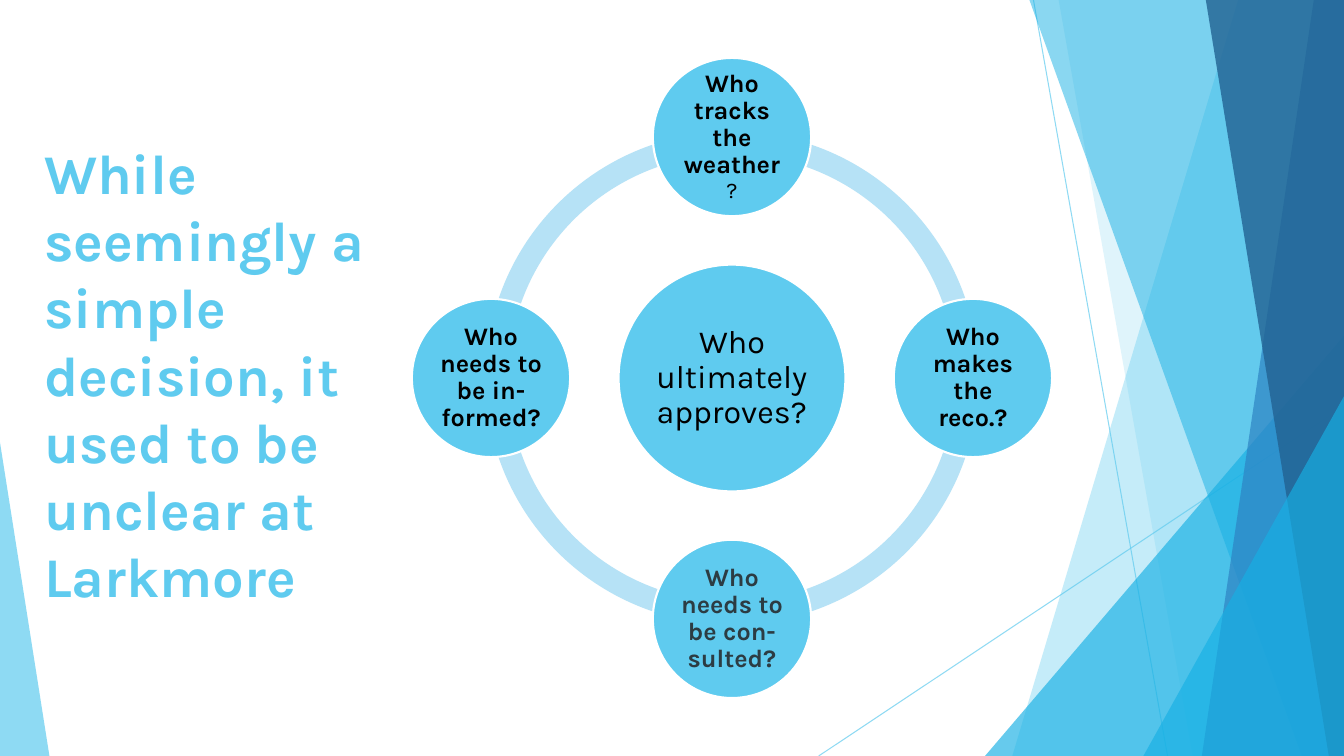
from math import cos, pi, sin
from lxml.etree import SubElement
from pptx import Presentation
from pptx.dml.color import RGBColor
from pptx.enum.shapes import MSO_CONNECTOR, MSO_SHAPE
from pptx.enum.text import MSO_ANCHOR, PP_ALIGN
from pptx.oxml.ns import qn
from pptx.util import Inches, Pt

WIDE, HIGH = 13.33, 7.5
FONT = "Karla"
SKY, CYAN, BLUE, NAVY = "5FCBEF", "17B0E4", "2E83C3", "226292"
PALE, WHITE, BLACK, SLATE = "B6E2F6", "FFFFFF", "000000", "2C3C43"
TITLE = "While seemingly a simple decision, it used to be unclear at Larkmore"

LINES = [((10.25, 0), (11.58, HIGH)), ((WIDE, 4.03), (8.12, HIGH))]
# kind, geometry, colour, opacity in percent
DECOR = [
    ("band", (12.28, 10.04), SKY, 36),
    ("band", (10.5, 11.83), SKY, 20),
    ("wedge", (9.77, 3.33, 3.56, 1), CYAN, 66),
    ("band", (10.21, 12.91), CYAN, 50),
    ("band", (13.03, 11.92), BLUE, 70),
    ("band", (11.96, 13.18), NAVY, 80),
    ("wedge", (11.34, 3.93, 1.99, 1), CYAN, 66),
    ("wedge", (0, 4.39, 0.49, 0), SKY, 70),
]
HUB = [("Who ultimately approves?", 23, False)]
NODES = [
    ([("Who tracks the weather", 18, True), ("?", 16, False)], BLACK),
    ([("Who makes the reco.?", 18, True)], BLACK),
    ([("Who needs to be con-sulted?", 18, True)], SLATE),
    ([("Who needs to be in-formed?", 18, True)], BLACK),
]
MID = (7.26, 3.75)
ORBIT, RING, CORE, DISC = 2.39, 4.89, 2.25, 1.57
ARCS = [(108, 162), (54, 108), (0, 54), (162, 0)]


def tint(code):
    """Turn a hex string into a colour."""
    return RGBColor.from_string(code)


def fade(shape, share):
    """Set the opacity of every colour in a shape, in percent."""
    for node in shape.element.spPr.iter(qn("a:srgbClr")):
        SubElement(node, qn("a:alpha")).set("val", str(share * 1000))


def paint(shape, code):
    """Give a shape a flat fill with no line or shadow."""
    shape.shadow.inherit = False
    shape.fill.solid()
    shape.fill.fore_color.rgb = tint(code)
    shape.line.fill.background()
    return shape


def place(shapes, kind, left, top, wide, high, code):
    """Add a painted preset shape."""
    box = [Inches(v) for v in (left, top, wide, high)]
    return paint(shapes.add_shape(kind, *box), code)


def band(shapes, geom, code):
    """Add a panel that runs from a slanted edge to the right side."""
    top, base = geom
    pen = shapes.build_freeform(Inches(top), 0, scale=1.0)
    ends = [(WIDE, 0), (WIDE, HIGH), (base, HIGH)]
    pen.add_line_segments([(Inches(x), Inches(y)) for x, y in ends])
    return paint(pen.convert_to_shape(), code)


def wedge(shapes, geom, code):
    """Add a right triangle that stands on the bottom edge."""
    left, top, wide, peak = geom
    shape = place(shapes, MSO_SHAPE.ISOSCELES_TRIANGLE, left, top, wide, HIGH - top, code)
    shape.adjustments[0] = peak
    return shape


def ray(shapes, start, end):
    """Add a thin translucent line."""
    line = shapes.add_connector(MSO_CONNECTOR.STRAIGHT, *[Inches(v) for v in start + end])
    line.line.color.rgb = tint(SKY)
    line.line.width = Pt(0.75)
    SubElement(line.element.spPr, qn("a:effectLst"))
    fade(line, 70)


def write(para, runs, code):
    """Fill a paragraph with styled runs."""
    for text, size, bold in runs:
        run = para.add_run()
        run.text = text
        run.font.name, run.font.size, run.font.bold = FONT, Pt(size), bold
        run.font.color.rgb = tint(code)


def disc(shapes, x, y, size, runs, code):
    """Add a white-rimmed circle with centred text."""
    shape = place(shapes, MSO_SHAPE.OVAL, x - size / 2, y - size / 2, size, size, SKY)
    shape.line.color.rgb = tint(WHITE)
    shape.line.width = Pt(1.5)
    frame = shape.text_frame
    frame.word_wrap = True
    frame.vertical_anchor = MSO_ANCHOR.MIDDLE
    frame.margin_left = frame.margin_right = Inches(0.03)
    frame.margin_top = frame.margin_bottom = Inches(0.03)
    para = frame.paragraphs[0]
    para.alignment = PP_ALIGN.CENTER
    para.line_spacing = 0.9
    write(para, runs, code)


def main():
    """Build the slide and save it."""
    deck = Presentation()
    deck.slide_width, deck.slide_height = Inches(WIDE), Inches(HIGH)
    shapes = deck.slides.add_slide(deck.slide_layouts[6]).shapes

    for start, end in LINES:
        ray(shapes, start, end)
    draw = {"band": band, "wedge": wedge}
    for kind, geom, code, share in DECOR:
        fade(draw[kind](shapes, geom, code), share)

    box = shapes.add_textbox(*[Inches(v) for v in (0.34, 0.84, 4.02, 5.25)])
    box.text_frame.word_wrap = True
    box.text_frame.vertical_anchor = MSO_ANCHOR.BOTTOM
    write(box.text_frame.paragraphs[0], [(TITLE, 40, True)], SKY)

    x, y = MID
    for start, end in ARCS:
        arc = place(shapes, MSO_SHAPE.BLOCK_ARC, x - RING / 2, y - RING / 2, RING, RING, PALE)
        for at, value in enumerate((start, end, 0.046)):
            arc.adjustments[at] = value
    disc(shapes, x, y, CORE, HUB, BLACK)
    for at, (runs, code) in enumerate(NODES):
        turn = 2 * pi * at / len(NODES)
        disc(shapes, x + ORBIT * sin(turn), y - ORBIT * cos(turn), DISC, runs, code)

    deck.save("out.pptx")


if __name__ == "__main__":
    main()
